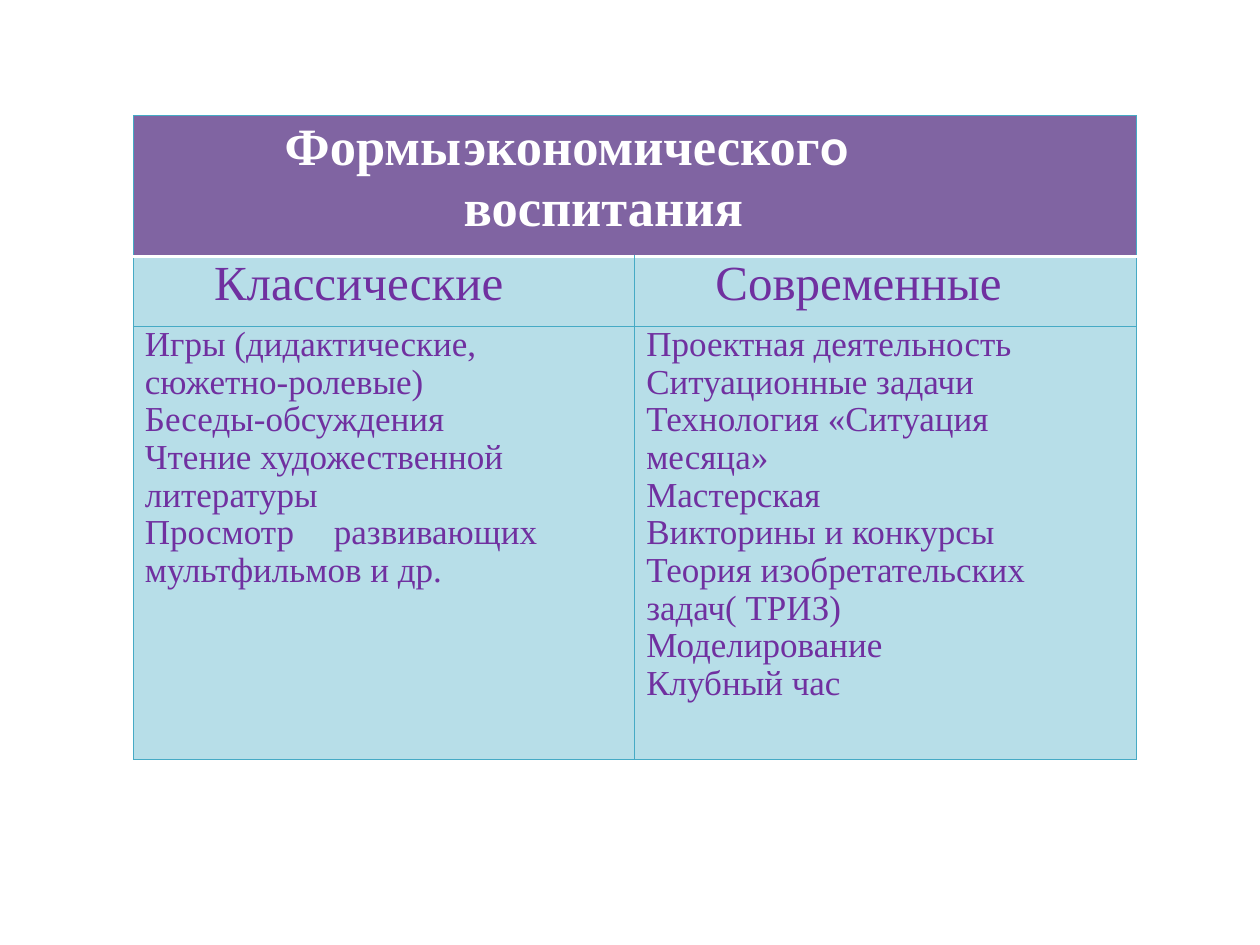
from lxml.etree import SubElement
from pptx import Presentation
from pptx.dml.color import RGBColor
from pptx.oxml.ns import qn
from pptx.util import Pt

COLORS = {
    "title_fill": "8064A2",
    "body_fill": "B7DEE8",
    "border": "46AAC5",
    "white": "FFFFFF",
    "text": "7030A0",
}
SERIF = "Times New Roman"
COLUMNS = [
    ("Классические", [
        "Игры (дидактические, сюжетно-ролевые)",
        "Беседы-обсуждения",
        "Чтение художественной литературы",
        "Просмотр\tразвивающих мультфильмов и др.",
    ]),
    ("Современные", [
        "Проектная деятельность",
        "Ситуационные задачи",
        "Технология «Ситуация",
        "месяца»",
        "Мастерская",
        "Викторины и конкурсы",
        "Теория изобретательских",
        "задач( ТРИЗ)",
        "Моделирование",
        "Клубный час",
    ]),
]


def add_text(p, text, size=20, font=SERIF, color="text", bold=False):
    r = p.add_run()
    r.text = text
    r.font.size = Pt(size)
    r.font.name = font
    r.font.bold = bold
    r.font.color.rgb = RGBColor.from_string(COLORS[color])


def indent(p, left, first=0, tab=None):
    pPr = p._p.get_or_add_pPr()
    pPr.set("marL", str(Pt(left)))
    pPr.set("indent", str(Pt(first)))
    if tab:
        tabs = SubElement(pPr, qn("a:tabLst"))
        SubElement(tabs, qn("a:tab"), pos=str(Pt(tab)), algn="l")


def format_cell(cell, fill, right=0, **edges):
    cell.margin_left = cell.margin_top = cell.margin_bottom = 0
    cell.margin_right = Pt(right)
    tcPr = cell._tc.get_or_add_tcPr()
    for side in "LRTB":
        color, width = edges.get(side, ("border", 0.75))
        ln = SubElement(tcPr, qn(f"a:ln{side}"), w=str(Pt(width)))
        solid = SubElement(ln, qn("a:solidFill"))
        SubElement(solid, qn("a:srgbClr"), val=COLORS[color])
    cell.fill.solid()
    cell.fill.fore_color.rgb = RGBColor.from_string(COLORS[fill])


def fill_title(table):
    for cell in table.rows[0].cells:
        format_cell(cell, "title_fill", B=("white", 2))
    title = table.cell(0, 0)
    title.merge(table.cell(0, 1))
    p = title.text_frame.paragraphs[0]
    indent(p, 188.6, -102.2, tab=215.3)
    style = dict(size=30, color="white", bold=True)
    add_text(p, "Формы\tэкономическог", **style)
    add_text(p, "о ", font="Calibri", **style)
    add_text(p, "воспитания", **style)


def fill_column(table, col, heading, items):
    head, body = table.cell(1, col), table.cell(2, col)
    format_cell(head, "body_fill", T=("white", 2))
    p = head.text_frame.paragraphs[0]
    indent(p, 46)
    add_text(p, heading, size=28)

    format_cell(body, "body_fill", right=24)
    tf = body.text_frame
    for i, item in enumerate(items):
        p = tf.add_paragraph() if i else tf.paragraphs[0]
        p.line_spacing = 0.97
        indent(p, 6.5, tab=134 if "\t" in item else None)
        add_text(p, item)


def add_forms_table(s, x, y, w, heights):
    table = s.shapes.add_table(
        len(heights), len(COLUMNS), Pt(x), Pt(y), Pt(w), Pt(sum(heights))).table
    table.first_row = table.horz_banding = False
    for column in table.columns:
        column.width = Pt(w / len(COLUMNS))
    for row, height in zip(table.rows, heights):
        row.height = Pt(height)
    fill_title(table)
    for col, (heading, items) in enumerate(COLUMNS):
        fill_column(table, col, heading, items)


def main():
    prs = Presentation()
    prs.slide_width, prs.slide_height = Pt(720), Pt(540)
    s = prs.slides.add_slide(prs.slide_layouts[6])
    add_forms_table(s, 76.3, 66.2, 573, [80.4, 39.8, 247.8])
    prs.save("out.pptx")


if __name__ == "__main__":
    main()
